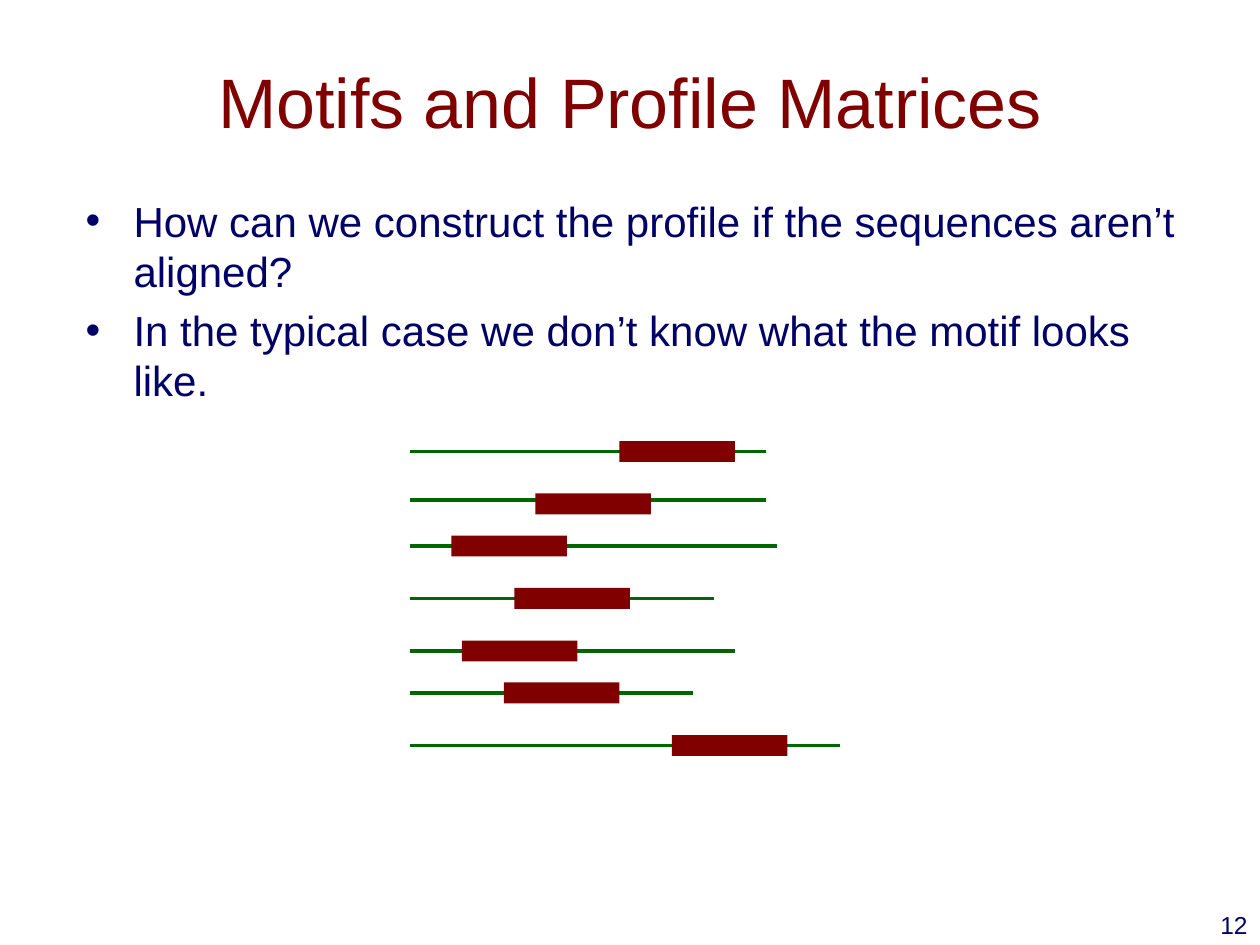
from lxml.etree import SubElement
from pptx import Presentation
from pptx.dml.color import RGBColor
from pptx.enum.shapes import MSO_CONNECTOR, MSO_SHAPE
from pptx.enum.text import MSO_ANCHOR, MSO_AUTO_SIZE, PP_ALIGN
from pptx.oxml.ns import qn
from pptx.util import Inches, Pt

COLORS = {"maroon": "800000", "green": "006600", "navy": "000066"}
UNIT = 1 / 12
MOTIF_W, MOTIF_H = 11, 2
SEQUENCES = [
    (1, 34, 20, 1), (5.64, 34, 12, 6), (10, 35, 4, 10), (15, 29, 10, 15),
    (20, 31, 5, 20), (24, 27, 9, 24), (29, 41, 25, 29),
]


def color(name):
    """Return the named palette colour."""
    return RGBColor.from_string(COLORS[name])


def place(sp, box):
    """Move a shape to a box given in inches."""
    sp.left, sp.top, sp.width, sp.height = map(Inches, box)


def write(sp, lines, size, name, align):
    """Fill a text shape with formatted paragraphs."""
    tf = sp.text_frame
    tf.text = "\n".join(lines)
    tf.word_wrap = True
    tf.auto_size = MSO_AUTO_SIZE.NONE
    for p in tf.paragraphs:
        p.alignment = align
        for r in p.runs:
            r.font.size = Pt(size)
            r.font.name = "Arial"
            r.font.color.rgb = color(name)
    return tf


def add_title(s, box, text):
    """Place the slide title."""
    sp = s.shapes.title
    place(sp, box)
    tf = write(sp, [text], 40, "maroon", PP_ALIGN.CENTER)
    tf.vertical_anchor = MSO_ANCHOR.MIDDLE


def add_bullets(s, box, lines):
    """Place the bulleted list in the body placeholder."""
    sp = s.placeholders[1]
    place(sp, box)
    tf = write(sp, lines, 24, "navy", PP_ALIGN.LEFT)
    for p in tf.paragraphs:
        pPr = p._p.get_or_add_pPr()
        pPr.set("marL", str(Inches(0.38)))
        pPr.set("indent", str(Inches(-0.38)))
        before = SubElement(pPr, qn("a:spcBef"))
        SubElement(before, qn("a:spcPct")).set("val", "20000")
        SubElement(pPr, qn("a:buChar")).set("char", "•")


def add_sequences(s, left, top):
    """Draw each sequence as a line carrying its motif block."""
    grp = s.shapes.add_group_shape()
    for y, length, start, mid in SEQUENCES:
        y_line = Inches(top + y * UNIT)
        line = grp.shapes.add_connector(
            MSO_CONNECTOR.STRAIGHT, Inches(left), y_line,
            Inches(left + length * UNIT), y_line)
        line.line.color.rgb = color("green")
        line.line.width = Pt(2.25)
        SubElement(line._element.spPr, qn("a:effectLst"))
        motif = grp.shapes.add_shape(
            MSO_SHAPE.RECTANGLE, Inches(left + start * UNIT),
            Inches(top + (mid - MOTIF_H / 2) * UNIT),
            Inches(MOTIF_W * UNIT), Inches(MOTIF_H * UNIT))
        motif.shadow.inherit = False
        motif.fill.solid()
        motif.fill.fore_color.rgb = color("maroon")
        motif.line.fill.background()


def add_number(s, box, text):
    """Place the page number."""
    sp = s.shapes.add_textbox(*map(Inches, box))
    write(sp, [text], 14, "navy", PP_ALIGN.RIGHT)


def main():
    """Build and save the slide."""
    prs = Presentation()
    prs.slide_width, prs.slide_height = Inches(10), Inches(7.5)
    s = prs.slides.add_slide(prs.slide_layouts[1])
    add_title(s, (0, 0.17, 10, 1.25), "Motifs and Profile Matrices")
    add_sequences(s, 3.25, 3.5)
    add_bullets(s, (0.58, 1.5, 8.92, 2), [
        "How can we construct the profile if the sequences aren’t aligned?",
        "In the typical case we don’t know what the motif looks like.",
    ])
    add_number(s, (7.92, 7.17, 2.08, 0.5), "12")
    prs.save("out.pptx")


if __name__ == "__main__":
    main()
